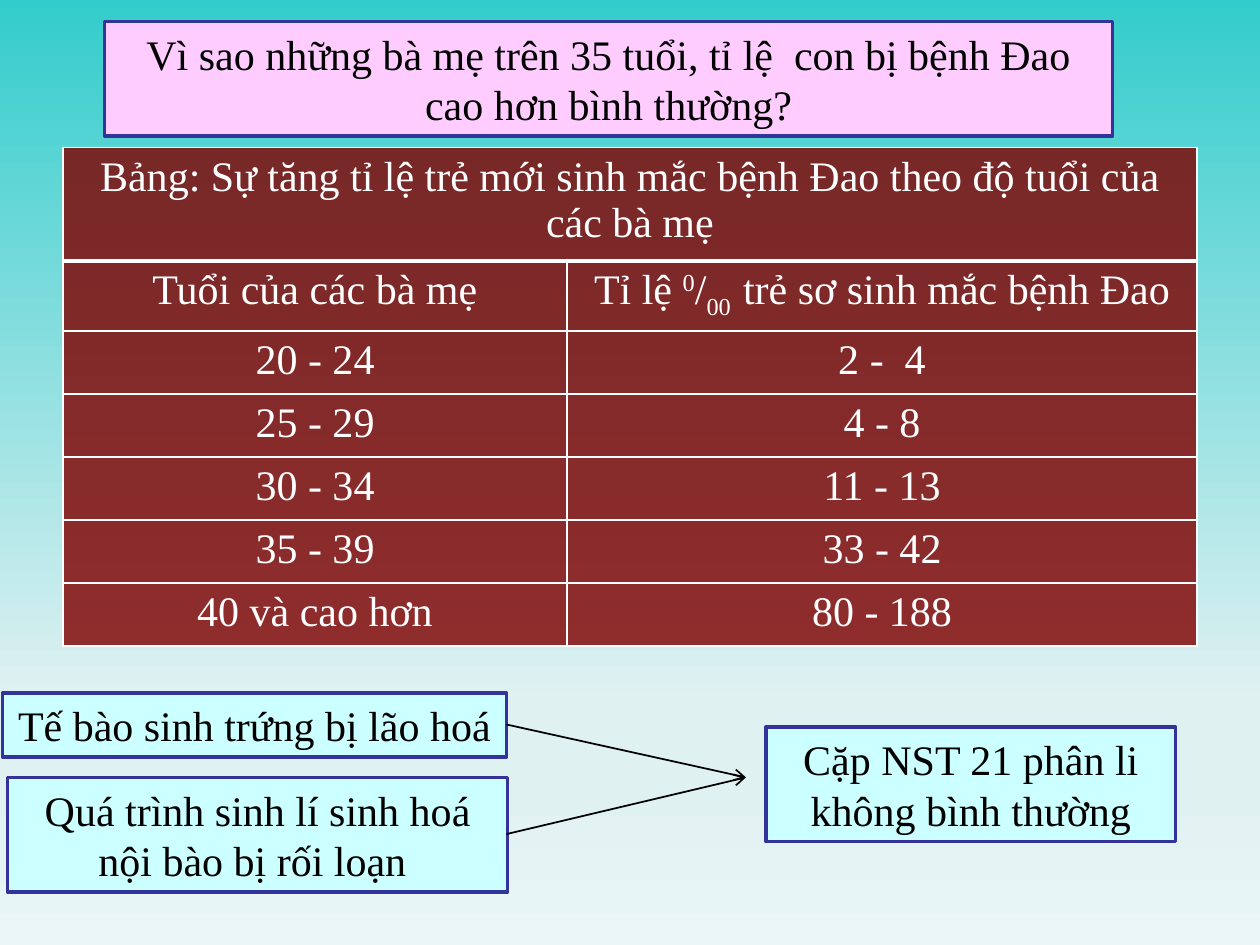
"""Build a slide on how a mother's age affects the rate of Down syndrome."""
from lxml import etree
from pptx import Presentation
from pptx.dml.color import RGBColor
from pptx.enum.shapes import MSO_CONNECTOR, MSO_SHAPE
from pptx.enum.text import MSO_AUTO_SIZE, PP_ALIGN
from pptx.oxml.ns import qn
from pptx.util import Inches, Pt

RECTANGLE = MSO_SHAPE.RECTANGLE
STRAIGHT = MSO_CONNECTOR.STRAIGHT
CENTER = PP_ALIGN.CENTER
FIT_SHAPE = MSO_AUTO_SIZE.SHAPE_TO_FIT_TEXT
FONT, SIZE = "Times New Roman", 24
WIDTH, HEIGHT = 10, 7.5

COLORS = {
    "question": "FFCCFF", "cause": "CCFFFF", "outline": "333399",
    "black": "000000", "white": "FFFFFF", "maroon": "800000",
}
BACKGROUND = [(0, "33CCCC"), (74, "E0F1F2"), (83, "E0F1F2"), (100, "EBF6F7")]
BOXES = [
    ("Vì sao những bà mẹ trên 35 tuổi, tỉ lệ  con bị bệnh Đao cao hơn bình thường?",
     "question", (0.83, 0.17, 8, 0.91)),
    ("Cặp NST 21 phân li không bình thường", "cause", (6.08, 5.77, 3.25, 0.91)),
    ("Tế bào sinh trứng bị lão hoá", "cause", (0.02, 5.5, 4, 0.51)),
    ("Quá trình sinh lí sinh hoá nội bào bị rối loạn ", "cause", (0.06, 6.17, 3.97, 0.91)),
]
TABLE_TITLE = "Bảng: Sự tăng tỉ lệ trẻ mới sinh mắc bệnh Đao theo độ tuổi của các bà mẹ"
RATE_HEADING = [("Tỉ lệ ", 0), ("0", 30), ("/", 0), ("00  ", -25),
                ("trẻ sơ sinh mắc bệnh Đao", 0)]
ROWS = [
    (TABLE_TITLE, ""),
    ("Tuổi của các bà mẹ", RATE_HEADING),
    ("20 - 24", "2 -  4"),
    ("25 - 29", "4 - 8"),
    ("30 - 34", "11 - 13"),
    ("35 - 39", "33 - 42"),
    ("40 và cao hơn", "80 - 188"),
]
COLUMN_WIDTHS = (4, 5)
TITLE_HEIGHT, ROW_HEIGHT = 0.9, 0.5
TABLE_LEFT, TABLE_TOP = 0.5, 1.17
ARROW_STARTS = [(4.02, 5.75), (4.02, 6.62)]
ARROW_TIP = (5.92, 6.17)


def color(name):
    return RGBColor.from_string(COLORS[name])


def write(paragraph, content, text_color):
    spans = [(content, 0)] if isinstance(content, str) else content
    for text, baseline in spans:
        span = paragraph.add_run()
        span.text = text
        if baseline:
            span.font._element.set("baseline", str(baseline * 1000))
    paragraph.alignment = CENTER
    paragraph.font.name = FONT
    paragraph.font.size = Pt(SIZE)
    paragraph.font.color.rgb = color(text_color)


def paint_background(page):
    fill = page.background.fill
    fill.gradient()
    fill.gradient_angle = 270
    stops = page.element.find(".//" + qn("a:gsLst"))
    for stop in list(stops):
        stops.remove(stop)
    for position, value in BACKGROUND:
        stop = etree.SubElement(stops, qn("a:gs"), pos=str(position * 1000))
        etree.SubElement(stop, qn("a:srgbClr"), val=value)


def add_box(page, text, fill, place):
    box = page.shapes.add_shape(RECTANGLE, *map(Inches, place))
    box.shadow.inherit = False
    box.fill.solid()
    box.fill.fore_color.rgb = color(fill)
    box.line.color.rgb = color("outline")
    box.line.width = Pt(2)
    box.text_frame.word_wrap = True
    box.text_frame.auto_size = FIT_SHAPE
    write(box.text_frame.paragraphs[0], text, "black")


def style_cell(cell, widths):
    cell.fill.solid()
    cell.fill.fore_color.rgb = color("maroon")
    properties = cell._tc.get_or_add_tcPr()
    etree.SubElement(properties.find(".//" + qn("a:srgbClr")), qn("a:alpha"), val="81000")
    for index, (side, width) in enumerate(widths.items()):
        border = etree.Element(qn("a:ln" + side), w=str(Pt(width)))
        paint = etree.SubElement(border, qn("a:solidFill"))
        etree.SubElement(paint, qn("a:srgbClr"), val=COLORS["white"])
        properties.insert(index, border)


def add_rates(page):
    heights = [TITLE_HEIGHT] + [ROW_HEIGHT] * (len(ROWS) - 1)
    place = (TABLE_LEFT, TABLE_TOP, sum(COLUMN_WIDTHS), sum(heights))
    table = page.shapes.add_table(len(ROWS), len(COLUMN_WIDTHS), *map(Inches, place)).table
    for column, width in zip(table.columns, COLUMN_WIDTHS):
        column.width = Inches(width)
    table.cell(0, 0).merge(table.cell(0, 1))
    for index, (contents, height) in enumerate(zip(ROWS, heights)):
        table.rows[index].height = Inches(height)
        widths = {"L": 1, "R": 1, "T": 3 if index == 1 else 1, "B": 3 if index == 0 else 1}
        for cell, content in zip(table.rows[index].cells, contents):
            style_cell(cell, widths)
            if content:
                write(cell.text_frame.paragraphs[0], content, "white")


def add_arrow(page, start, end):
    arrow = page.shapes.add_connector(STRAIGHT, *map(Inches, start + end))
    arrow.line.color.rgb = color("black")
    arrow.line.width = Pt(1)
    properties = arrow._element.spPr
    etree.SubElement(properties.find(qn("a:ln")), qn("a:tailEnd"), type="arrow")
    etree.SubElement(properties, qn("a:effectLst"))


def main():
    deck = Presentation()
    deck.slide_width, deck.slide_height = Inches(WIDTH), Inches(HEIGHT)
    page = deck.slides.add_slide(deck.slide_layouts[6])
    paint_background(page)
    for text, fill, place in BOXES:
        add_box(page, text, fill, place)
    add_rates(page)
    for start in ARROW_STARTS:
        add_arrow(page, start, ARROW_TIP)
    deck.save("out.pptx")


if __name__ == "__main__":
    main()
